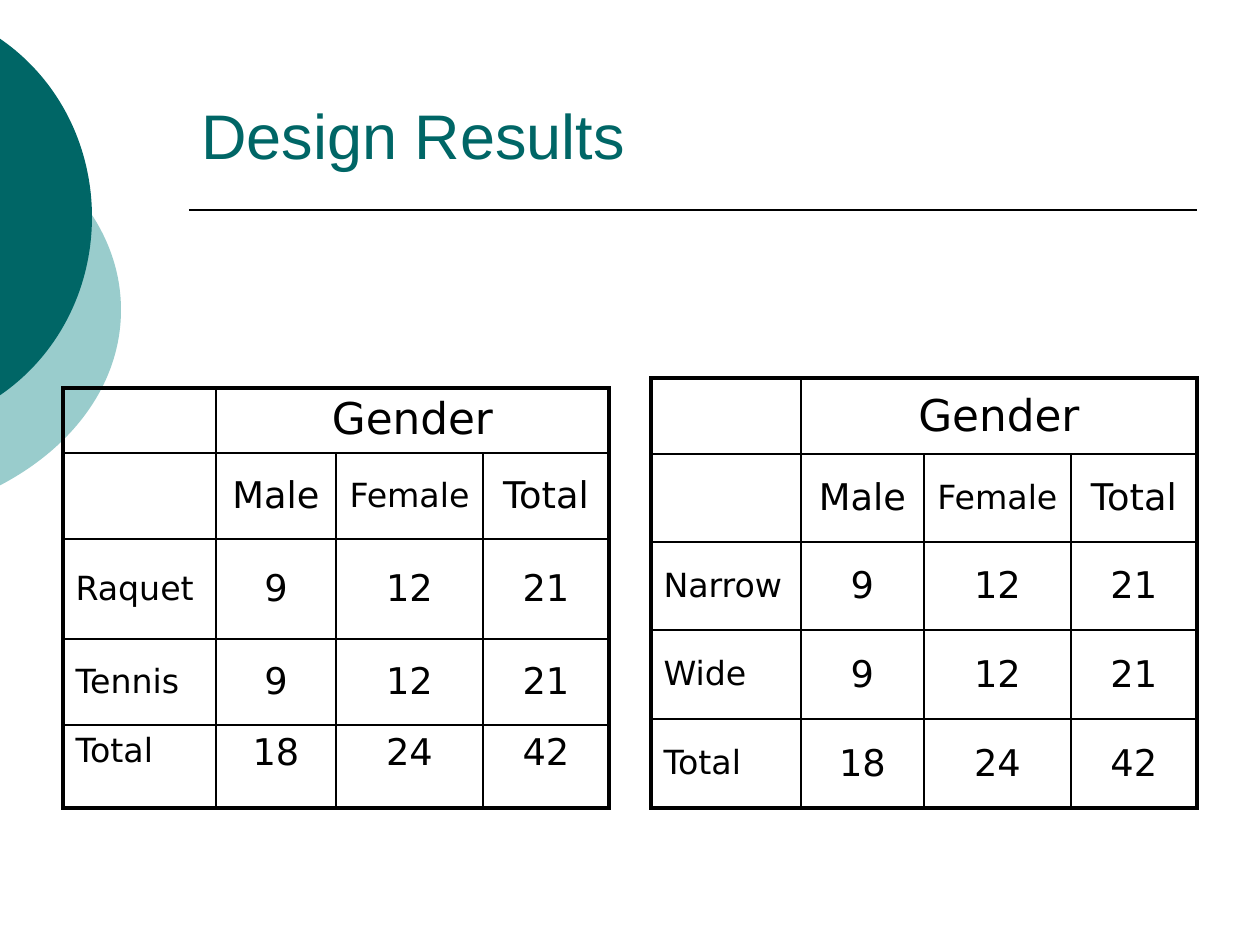
from dataclasses import dataclass

from lxml import etree
from pptx import Presentation
from pptx.dml.color import RGBColor
from pptx.enum.shapes import MSO_CONNECTOR
from pptx.enum.text import MSO_ANCHOR, PP_ALIGN
from pptx.oxml.ns import qn
from pptx.util import Pt

PX = 914400 // 126
STRAIGHT = MSO_CONNECTOR.STRAIGHT
TOP, MIDDLE, BOTTOM = MSO_ANCHOR.TOP, MSO_ANCHOR.MIDDLE, MSO_ANCHOR.BOTTOM
LEFT, CENTER = PP_ALIGN.LEFT, PP_ALIGN.CENTER


@dataclass(frozen=True)
class Theme:
    dark: str = "006666"
    light: str = "99CCCC"
    ink: str = "000000"
    title_font: str = "Arial"
    table_font: str = "DejaVu Sans"
    title: int = 36
    heading: int = 25
    value: int = 21
    label: int = 19
    outer: float = 2.25
    inner: float = 1


THEME = Theme()


def px(*lengths):
    return [n * PX for n in lengths]


def write(tf, text, align, size, font, color):
    p = tf.paragraphs[0]
    p.alignment = align
    r = p.add_run()
    r.text = text
    for name, value in {"size": Pt(size), "name": font}.items():
        setattr(r.font, name, value)
    r.font.color.rgb = RGBColor.from_string(color)


def add_disc(s, box, half_chord, handle, tip_handle, color):
    """Fill the right-hand cap of a disc, cut off at the slide's left edge.

    handle is the (x, y) control point beside the cut, with y taken from the
    middle; tip_handle is the vertical reach of the control point at the tip.
    """
    x, y, w, h = box
    edge, tip, mid = -x - 1, w, h // 2
    hx, hy = handle[0] - x, handle[1]
    start = (edge, mid - half_chord)
    curves = [
        [(hx, mid - hy), (tip, mid - tip_handle), (tip, mid)],
        [(tip, mid + tip_handle), (hx, mid + hy), (edge, mid + half_chord)],
    ]
    fb = s.shapes.build_freeform(*start, scale=PX)
    fb.add_line_segments([curve[-1] for curve in curves], close=True)
    sp = fb.convert_to_shape()
    for name, value in zip(("left", "top", "width", "height"), px(*box)):
        setattr(sp, name, value)

    # Curved outline within the box
    outline = sp._element.find(".//" + qn("a:path"))
    for child in list(outline):
        outline.remove(child)
    outline.set("w", str(w))
    outline.set("h", str(h))
    for tag, points in [("moveTo", [start])] + [("cubicBezTo", c) for c in curves]:
        step = etree.SubElement(outline, qn(f"a:{tag}"))
        for a, b in points:
            etree.SubElement(step, qn("a:pt"), x=str(a), y=str(b))
    etree.SubElement(outline, qn("a:close"))

    sp.shadow.inherit = False
    sp.fill.solid()
    sp.fill.fore_color.rgb = RGBColor.from_string(color)
    sp.line.fill.background()


def add_title(s, box, text):
    x, y, w, h = box
    # Rule below the title
    rule_y = y + 169
    line = s.shapes.add_connector(STRAIGHT, *px(x, rule_y, x + w, rule_y))
    line.line.width = Pt(THEME.inner)
    line.line.color.rgb = RGBColor.from_string(THEME.ink)
    etree.SubElement(line._element.spPr, qn("a:effectLst"))
    # Title text
    tf = s.shapes.add_textbox(*px(*box)).text_frame
    tf.word_wrap = True
    tf.vertical_anchor = BOTTOM
    write(tf, text, LEFT, THEME.title, THEME.title_font, THEME.dark)


def set_borders(cell, widths):
    tcPr = cell._tc.get_or_add_tcPr()
    for side, width in zip("LRTB", widths):
        ln = etree.SubElement(tcPr, qn(f"a:ln{side}"), w=str(Pt(width)))
        fill = etree.SubElement(ln, qn("a:solidFill"))
        etree.SubElement(fill, qn("a:srgbClr"), val=THEME.ink)


def cell_size(text, row, col):
    if row == 0:
        return THEME.heading
    return THEME.label if col == 0 or text == "Female" else THEME.value


def add_gender_table(s, box, labels, cols, rows, anchors):
    data = [
        ["", "Gender", "", ""],
        ["", "Male", "Female", "Total"],
        [labels[0], "9", "12", "21"],
        [labels[1], "9", "12", "21"],
        ["Total", "18", "24", "42"],
    ]
    table = s.shapes.add_table(len(rows), len(cols), *px(*box)).table
    for flag in ("first_row", "horz_banding"):
        setattr(table, flag, False)
    for col, width in zip(table.columns, cols):
        col.width = width * PX
    for row, height in zip(table.rows, rows):
        row.height = height * PX
    table.cell(0, 1).merge(table.cell(0, 3))

    for i, values in enumerate(data):
        for j, text in enumerate(values):
            cell = table.cell(i, j)
            if not cell.is_spanned:
                on_edge = (j == 0, j == 3 or cell.is_merge_origin,
                           i == 0, i == len(data) - 1)
                set_borders(cell, [THEME.outer if e else THEME.inner
                                   for e in on_edge])
            cell.fill.background()
            cell.vertical_anchor = anchors[i]
            if text:
                write(cell.text_frame, text, CENTER if j else LEFT,
                      cell_size(text, i, j), THEME.table_font, THEME.ink)


def main():
    prs = Presentation()
    prs.slide_width, prs.slide_height = px(1260, 945)
    s = prs.slides.add_slide(prs.slide_layouts[6])

    # Discs at the left edge
    add_disc(s, (-446, 95, 567, 431), 176, (76, 136), 71, THEME.light)
    add_disc(s, (-334, 0, 426, 435), 179, (58, 139), 72, THEME.dark)

    add_title(s, (189, 41, 1008, 137), "Design Results")

    # Result tables
    add_gender_table(s, (63, 388, 546, 421), ("Raquet", "Tennis"),
                     (153, 120, 147, 126), (54, 86, 100, 86, 83),
                     (TOP, MIDDLE, MIDDLE, MIDDLE, TOP))
    add_gender_table(s, (651, 378, 546, 430), ("Narrow", "Wide"),
                     (150, 123, 147, 126), (76, 88, 88, 89, 89),
                     (MIDDLE,) * 5)

    prs.save("out.pptx")


if __name__ == "__main__":
    main()
